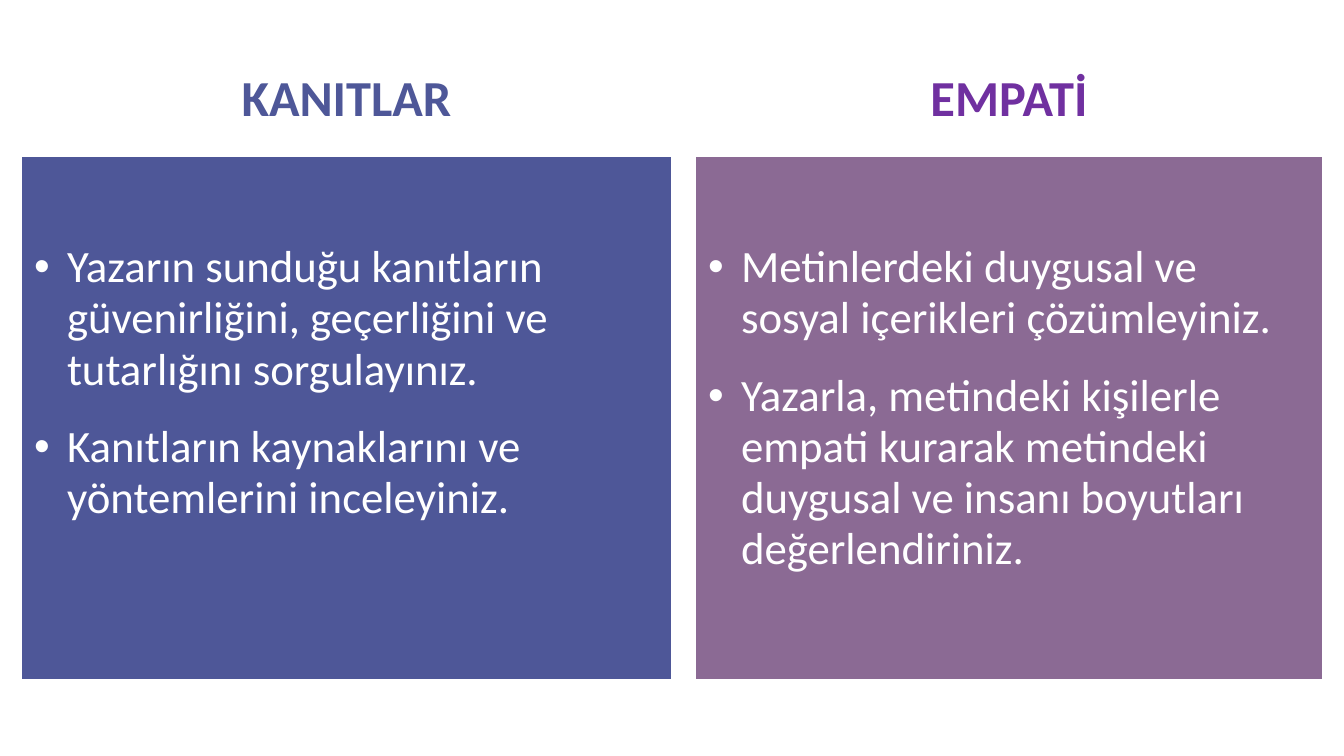
import pptx
import pptx.dml.color
import pptx.enum.text
import pptx.util

RGBColor = pptx.dml.color.RGBColor
WHITE = RGBColor(0xFF, 0xFF, 0xFF)
INDIGO = RGBColor(0x4E, 0x57, 0x98)
PURPLE = RGBColor(0x70, 0x30, 0xA0)
MAUVE = RGBColor(0x8B, 0x6A, 0x94)

COLUMNS = [
    {
        "heading": "KANITLAR", "heading_color": INDIGO, "panel_color": INDIGO,
        "left": 21, "width": 651, "placeholders": (1, 2),
        "bullets": [
            "Yazarın sunduğu kanıtların güvenirliğini, geçerliğini ve tutarlığını sorgulayınız.",
            "Kanıtların kaynaklarını ve yöntemlerini inceleyiniz.",
        ],
    },
    {
        "heading": "EMPATİ", "heading_color": PURPLE, "panel_color": MAUVE,
        "left": 695, "width": 628, "placeholders": (3, 4),
        "bullets": [
            "Metinlerdeki duygusal ve sosyal içerikleri çözümleyiniz.",
            "Yazarla, metindeki kişilerle empati kurarak metindeki duygusal ve insanı boyutları değerlendiriniz.",
        ],
    },
]

SLIDE_SIZE = (1344, 756)
HEADING_TOP, HEADING_HEIGHT = 52, 83
PANEL_TOP, PANEL_HEIGHT = 156, 524
SIDE_INSET, EDGE_INSET, PANEL_INSET = 13, 7, 86
BULLET_INDENT = 33
LINE_SPACING = 0.95
HEADING_FONT = {"name": "Calibri", "size": pptx.util.Pt(36), "bold": True}
BULLET_FONT = {"name": "Calibri", "size": pptx.util.Pt(32), "bold": False}


def px(length):
    return pptx.util.Emu(round(length * 914400 / 100.8))


def set_attributes(target, values):
    for name, value in values.items():
        setattr(target, name, value)


def place(shape, left, top, width, height, top_inset, anchor):
    set_attributes(shape, {
        "left": px(left), "top": px(top), "width": px(width), "height": px(height),
    })
    set_attributes(shape.text_frame, {
        "word_wrap": True,
        "auto_size": pptx.enum.text.MSO_AUTO_SIZE.NONE,
        "vertical_anchor": anchor,
        "margin_left": px(SIDE_INSET), "margin_right": px(SIDE_INSET),
        "margin_top": px(top_inset), "margin_bottom": px(EDGE_INSET),
    })


def add_bullet(paragraph):
    properties = paragraph._p.get_or_add_pPr()
    properties.set("marL", str(px(BULLET_INDENT)))
    properties.set("indent", str(-px(BULLET_INDENT)))
    bullet = pptx.oxml.parse_xml(
        '<a:buChar xmlns:a="http://schemas.openxmlformats.org/drawingml/2006/main" char="•"/>')
    properties.append(bullet)


def fill_heading(shape, column):
    place(shape, column["left"], HEADING_TOP, column["width"], HEADING_HEIGHT,
          EDGE_INSET, pptx.enum.text.MSO_ANCHOR.BOTTOM)
    paragraph = shape.text_frame.paragraphs[0]
    set_attributes(paragraph, {
        "text": column["heading"],
        "alignment": pptx.enum.text.PP_ALIGN.CENTER,
        "line_spacing": LINE_SPACING,
        "space_before": pptx.util.Pt(0),
    })
    set_attributes(paragraph.font, HEADING_FONT)
    paragraph.font.color.rgb = column["heading_color"]


def fill_panel(shape, column):
    place(shape, column["left"], PANEL_TOP, column["width"], PANEL_HEIGHT,
          PANEL_INSET, pptx.enum.text.MSO_ANCHOR.TOP)
    shape.fill.solid()
    shape.fill.fore_color.rgb = column["panel_color"]
    shape.line.color.rgb = WHITE
    shape.line.width = pptx.util.Pt(1.5)
    frame = shape.text_frame
    for index, text in enumerate(column["bullets"]):
        paragraph = frame.add_paragraph() if index else frame.paragraphs[0]
        add_bullet(paragraph)
        set_attributes(paragraph, {
            "text": text,
            "line_spacing": LINE_SPACING,
            "space_before": pptx.util.Pt(18.7 if index else 0),
        })
        set_attributes(paragraph.font, BULLET_FONT)
        paragraph.font.color.rgb = WHITE


def main():
    presentation = pptx.Presentation()
    presentation.slide_width, presentation.slide_height = map(px, SLIDE_SIZE)
    comparison_layout = presentation.slide_layouts[4]
    slide = presentation.slides.add_slide(comparison_layout)
    title = slide.shapes.title.element
    title.getparent().remove(title)
    placeholders = {shape.placeholder_format.idx: shape for shape in slide.placeholders}
    for column in COLUMNS:
        heading, panel = (placeholders[index] for index in column["placeholders"])
        fill_heading(heading, column)
        fill_panel(panel, column)
    presentation.save("out.pptx")


if __name__ == "__main__":
    main()
